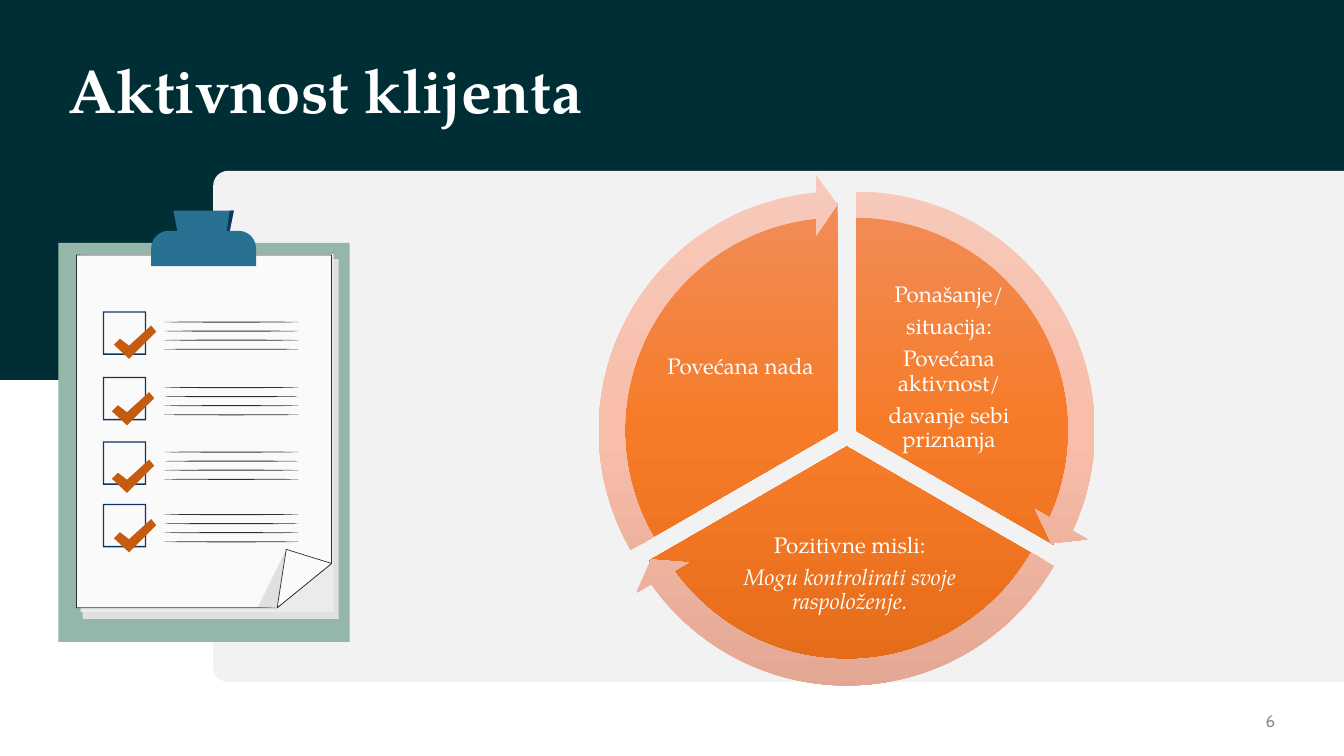
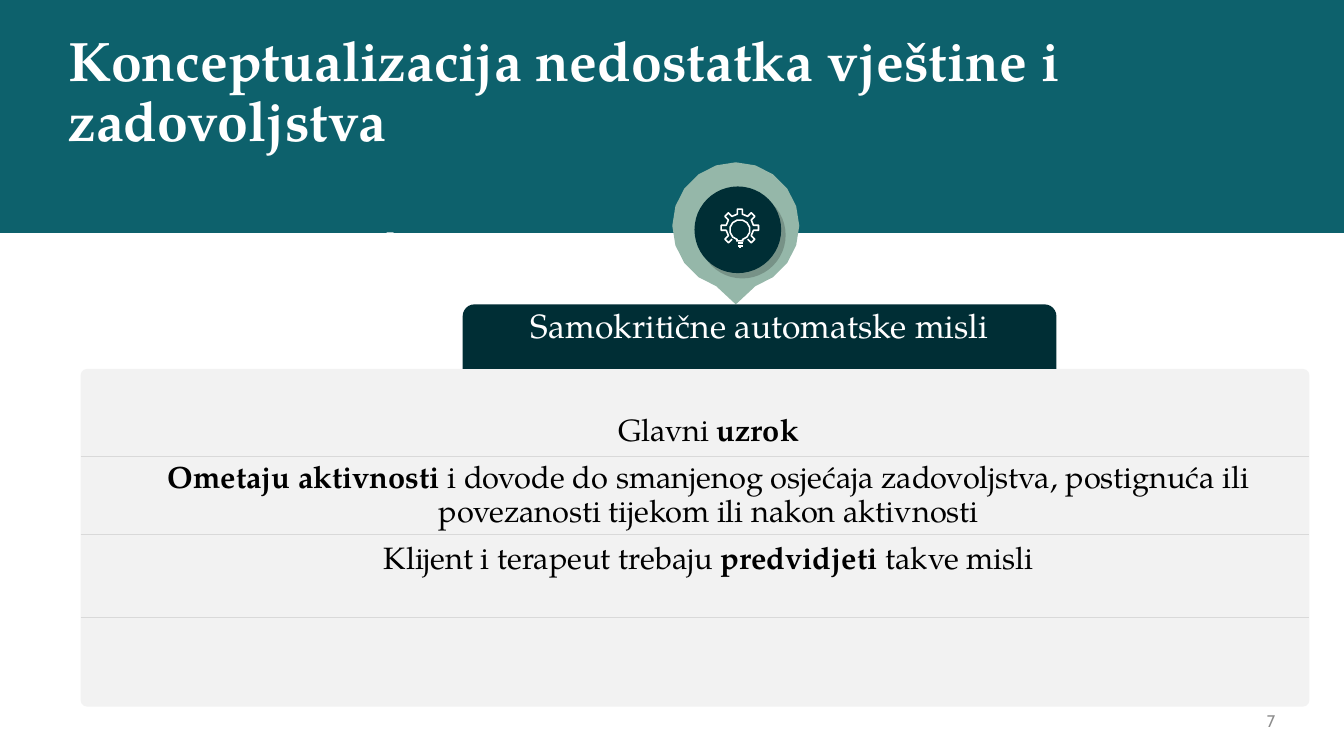
from copy import deepcopy
from math import cos, radians, sin

from lxml import etree
from pptx import Presentation
from pptx.dml.color import RGBColor
from pptx.enum.shapes import MSO_CONNECTOR, MSO_SHAPE as Shape
from pptx.enum.text import MSO_ANCHOR as Anchor, MSO_AUTO_SIZE, PP_ALIGN as Align
from pptx.oxml.ns import qn
from pptx.util import Inches, Pt

SLIDE_WIDTH, SLIDE_HEIGHT = 40 / 3, 7.5
SERIF, SANS = "TeX Gyre Pagella", "Cabin"
WHITE, BLACK, DARK, TEAL, SAGE = "FFFFFF", "000000", "002E35", "0D616C", "95B7A9"
PANEL, RULE, NUMBER_GREY, INK = "F2F2F2", "D9D9D9", "8C8C8C", "263238"
PAPER, PAPER_SHADE, PAPER_EDGE = "FAFAFA", "E0E0E0", "EBEBEB"
CLIP_BLUE, NAVY, TICK_ORANGE = "287192", "103464", "C55A11"
WEDGE_STOPS = ("F18C57", "F67B28", "E56C19")
ARROW_STOPS = ("F7C9BA", "F8BEAA", "E2A692")


def color(value):
    return RGBColor.from_string(value)


# Shapes and lines
def paint(shape, fill=None, line=None, width=0.75):
    shape.shadow.inherit = False
    if fill:
        shape.fill.solid()
        shape.fill.fore_color.rgb = color(fill)
    else:
        shape.fill.background()
    if line:
        shape.line.color.rgb = color(line)
        shape.line.width = Pt(width)
    else:
        shape.line.fill.background()
    return shape


def add_preset(slide, kind, at, fill=None, adjust=()):
    shape = slide.shapes.add_shape(kind, *map(Inches, at))
    for index, value in enumerate(adjust):
        shape.adjustments[index] = value
    return paint(shape, fill)


def add_outline(slide, points, fill=None, line=None, width=0.75, close=True):
    first, *rest = [(Inches(x), Inches(y)) for x, y in points]
    builder = slide.shapes.build_freeform(*first)
    builder.add_line_segments(rest, close=close)
    return paint(builder.convert_to_shape(), fill, line, width)


def add_line(slide, start, end, line, width):
    connector = slide.shapes.add_connector(
        MSO_CONNECTOR.STRAIGHT, *map(Inches, (*start, *end)))
    connector.line.color.rgb = color(line)
    connector.line.width = Pt(width)
    etree.SubElement(connector.element.spPr, qn("a:effectLst"))


def shade_down(shape, colors):
    """Fill a shape with three evenly spaced colours from top to bottom."""
    shape.fill.gradient()
    shape.fill.gradient_angle = 270
    stop_list = shape.element.spPr.find(".//" + qn("a:gsLst"))
    stop_list.insert(1, deepcopy(stop_list[0]))
    for index, stop in enumerate(shape.fill.gradient_stops):
        stop.position = index / 2
        stop.color.rgb = color(colors[index])


def drop_shadow(shape, distance, angle, opacity):
    effects = shape.element.spPr.find(qn("a:effectLst"))
    shadow = etree.SubElement(effects, qn("a:outerShdw"), blurRad="0",
                              dist=str(Pt(distance)), dir=str(angle * 60000))
    tone = etree.SubElement(shadow, qn("a:srgbClr"), val=BLACK)
    etree.SubElement(tone, qn("a:alpha"), val=str(opacity * 1000))


def arc(center, radius, start, end, step):
    x, y = center
    return [(x + radius * cos(radians(angle)), y + radius * sin(radians(angle)))
            for angle in range(start, end + 1, step)]


# Text
def set_text(shape, paragraphs, size, ink, font=SERIF, align=Align.CENTER, anchor=Anchor.MIDDLE,
             insets=(0, 0, 0, 0), spacing=None, before=0, after=0):
    """Each paragraph is a list of (text, style); style is "", "b" or "i"."""
    frame = shape.text_frame
    frame.word_wrap = True
    frame.auto_size = MSO_AUTO_SIZE.NONE
    frame.vertical_anchor = anchor
    frame.margin_left, frame.margin_top, frame.margin_right, frame.margin_bottom = map(
        Inches, insets)
    for index, spans in enumerate(paragraphs):
        para = frame.add_paragraph() if index else frame.paragraphs[0]
        para.alignment = align
        para.line_spacing = spacing
        para.space_before = Pt(before if index else 0)
        para.space_after = Pt(after)
        for text, style in spans:
            span = para.add_run()
            span.text = text
            span.font.name, span.font.size = font, Pt(size)
            span.font.color.rgb = color(ink)
            span.font.bold, span.font.italic = style == "b", style == "i"


def add_text(slide, at, paragraphs, size, ink, **options):
    box = slide.shapes.add_textbox(*map(Inches, at))
    set_text(box, paragraphs, size, ink, **options)


# Shared slide frame
def add_slide(deck, title, title_size, number, band_height, band_fill):
    slide = deck.slides.add_slide(deck.slide_layouts[5])
    add_preset(slide, Shape.RECTANGLE, (0, 0, SLIDE_WIDTH, band_height), band_fill)
    heading = slide.shapes.title
    heading.element.getparent().append(heading.element)
    heading.left, heading.top, heading.width, heading.height = map(
        Inches, (0.58, 0.4, 12.18, 1.06))
    insets = (0.1, 0.05, 0.1, 0.05)
    set_text(heading, [[(title, "b")]], title_size, WHITE,
             align=Align.LEFT, insets=insets, spacing=0.9)
    add_text(slide, (12.3, 6.95, 0.45, 0.4), [[(number, "")]], 12, NUMBER_GREY,
             font=SANS, align=Align.RIGHT, insets=insets)
    return slide


# Clipboard
def add_check_row(slide, top, tick_left, tick_top):
    add_preset(slide, Shape.FRAME, (1.02, top, 0.43, 0.43), NAVY, adjust=(0.03,))
    for index in range(4):
        add_preset(slide, Shape.OVAL, (1.63, top + 0.1 + index * 0.09, 1.33, 0.01), INK)
    tick = [(0, 0.19), (0.06, 0.13), (0.15, 0.2), (0.37, 0), (0.42, 0.06), (0.15, 0.33)]
    add_outline(slide, [(tick_left + x, tick_top + y) for x, y in tick], TICK_ORANGE)


def add_clipboard(slide):
    add_preset(slide, Shape.RECTANGLE, (0.58, 2.41, 2.89, 3.96), SAGE)
    add_preset(slide, Shape.RECTANGLE, (0.82, 2.57, 2.54, 3.57), PAPER_SHADE)
    add_preset(slide, Shape.RECTANGLE, (0.8, 2.52, 2.51, 3.55), PAPER_EDGE)
    corner, fold, tip = (3.29, 5.59), (2.75, 6.03), (2.84, 5.45)
    add_outline(slide, [(0.76, 2.53), (3.29, 2.53), corner, fold, (0.76, 6.03)],
                PAPER, INK, 0.5)
    add_outline(slide, [tip, (2.56, 6.02), fold], PAPER_SHADE)
    add_outline(slide, [tip, corner, fold], PAPER, INK, 0.5)
    # Clip
    add_preset(slide, Shape.ROUND_2_SAME_RECTANGLE, (1.5, 2.29, 1.04, 0.35), CLIP_BLUE,
               adjust=(0.49, 0))
    add_outline(slide, [(1.76, 2.29), (1.72, 2.09), (2.32, 2.09), (2.28, 2.29)], CLIP_BLUE)
    add_outline(slide, [(2.32, 2.09), (2.28, 2.09), (2.25, 2.29), (2.28, 2.29)], NAVY)
    for row in ((3.09, 1.13, 3.23), (3.74, 1.11, 3.89), (4.38, 1.11, 4.56), (5, 1.13, 5.15)):
        add_check_row(slide, *row)


# Three-part cycle
def add_cycle(slide):
    centers = [(8.49, 4.27), (8.4, 4.43), (8.31, 4.27)]
    wedge_angles = [(162, 18), (18, 90), (90, 162)]
    arrow_angles = [(14.73, 161.99), (86.72, 18.01), (158.73, 90)]
    layers = [
        (Shape.PIE, 4.52, wedge_angles, (), (), WEDGE_STOPS),
        (Shape.CIRCULAR_ARROW, 5.08, arrow_angles, (0.051, 3.275), (0.059,), ARROW_STOPS),
    ]
    for kind, size, angles, lead, trail, stops in layers:
        for (x, y), pair in zip(centers, angles):
            part = add_preset(slide, kind, (x - size / 2, y - size / 2, size, size),
                              adjust=(*lead, *pair, *trail))
            shade_down(part, stops)
    labels = [
        ((8.61, 2.98, 1.61, 1.34),
         [[("Ponašanje/", "")], [("situacija:", "")], [("Povećana aktivnost/", "")],
          [("davanje sebi priznanja", "")]]),
        ((7.22, 5.11, 2.42, 1.18),
         [[("Pozitivne misli:", "")], [("Mogu kontrolirati svoje raspoloženje.", "i")]]),
        ((6.57, 2.97, 1.61, 1.34), [[("Povećana nada ", "")]]),
    ]
    for at, paragraphs in labels:
        add_text(slide, at, paragraphs, 16, WHITE, insets=(0.02,) * 4, spacing=0.9, after=5.6)


# Pin with gear and bulb
def add_bulb(slide, x, y):
    neck = [(x + 0.03, y + 0.11), (x - 0.03, y + 0.11)]
    add_outline(slide, arc((x, y), 0.1, 105, 435, 30) + neck, line=WHITE, width=1.13)


def add_gear(slide, x, y):
    tooth = [(0.135, 0.025), (0.185, 0.025), (0.185, -0.025), (0.135, -0.025)]
    points = []
    for angle in range(45, -226, -45):
        c, s = cos(radians(angle)), sin(radians(angle))
        points += [(x + out * c - side * s, y + out * s + side * c) for out, side in tooth]
    add_outline(slide, points, line=WHITE, width=1.13, close=False)


def add_pin(slide):
    add_outline(slide, arc((7.3, 2.24), 0.63, 108, 432, 18) + [(7.3, 3.02)], SAGE)
    disc = add_preset(slide, Shape.OVAL, (6.89, 1.85, 0.86, 0.86), DARK)
    drop_shadow(disc, 5, 50, 20)
    add_gear(slide, 7.34, 2.26)
    add_bulb(slide, 7.34, 2.28)
    for start, end in (((7.32, 2.41), (7.37, 2.41)), ((7.32, 2.44), (7.37, 2.44)),
                       ((7.34, 2.44), (7.34, 2.46))):
        add_line(slide, start, end, WHITE, 1.13)


# Slides
def build_activity_slide(deck):
    slide = add_slide(deck, "Aktivnost klijenta", 44, "6", 3.77, DARK)
    panel = add_preset(slide, Shape.ROUND_2_SAME_RECTANGLE, (5.19, -1.38, 5.07, 11.22), PANEL,
                       adjust=(0, 0.029))
    panel.rotation = 90
    add_clipboard(slide)
    add_cycle(slide)


def build_concept_slide(deck):
    slide = add_slide(deck, "Konceptualizacija nedostatka vještine i zadovoljstva", 39.6, "7",
                      2.31, TEAL)
    panel = add_preset(slide, Shape.ROUNDED_RECTANGLE, (0.8, 3.66, 12.19, 3.35), PANEL,
                       adjust=(0.019,))
    set_text(panel, [
        [("Glavni ", ""), ("uzrok", "b")],
        [("Ometaju aktivnosti ", "b"),
         ("i dovode do smanjenog osjećaja zadovoljstva, postignuća ili povezanosti "
          "tijekom ili nakon aktivnosti", "")],
        [("Klijent i terapeut trebaju ", ""), ("predvidjeti", "b"), (" takve misli", "")],
    ], 22, BLACK, anchor=Anchor.TOP, insets=(0.27, 0.44, 0, 0), spacing=0.9, before=10)
    for y in (4.53, 5.3, 6.12):
        add_line(slide, (0.8, y), (12.99, y), RULE, 0.5)
    add_pin(slide)
    tab = add_preset(slide, Shape.ROUND_2_SAME_RECTANGLE, (4.59, 3.02, 5.89, 0.64), DARK,
                     adjust=(0.182, 0))
    set_text(tab, [[("Samokritične automatske misli", "")]], 24, WHITE,
             insets=(0, 0, 0, 0.27))
    add_bulb(slide, 3.87, 2.41)


def main():
    deck = Presentation()
    deck.slide_width, deck.slide_height = Inches(SLIDE_WIDTH), Inches(SLIDE_HEIGHT)
    build_activity_slide(deck)
    build_concept_slide(deck)
    deck.save("out.pptx")


if __name__ == "__main__":
    main()
